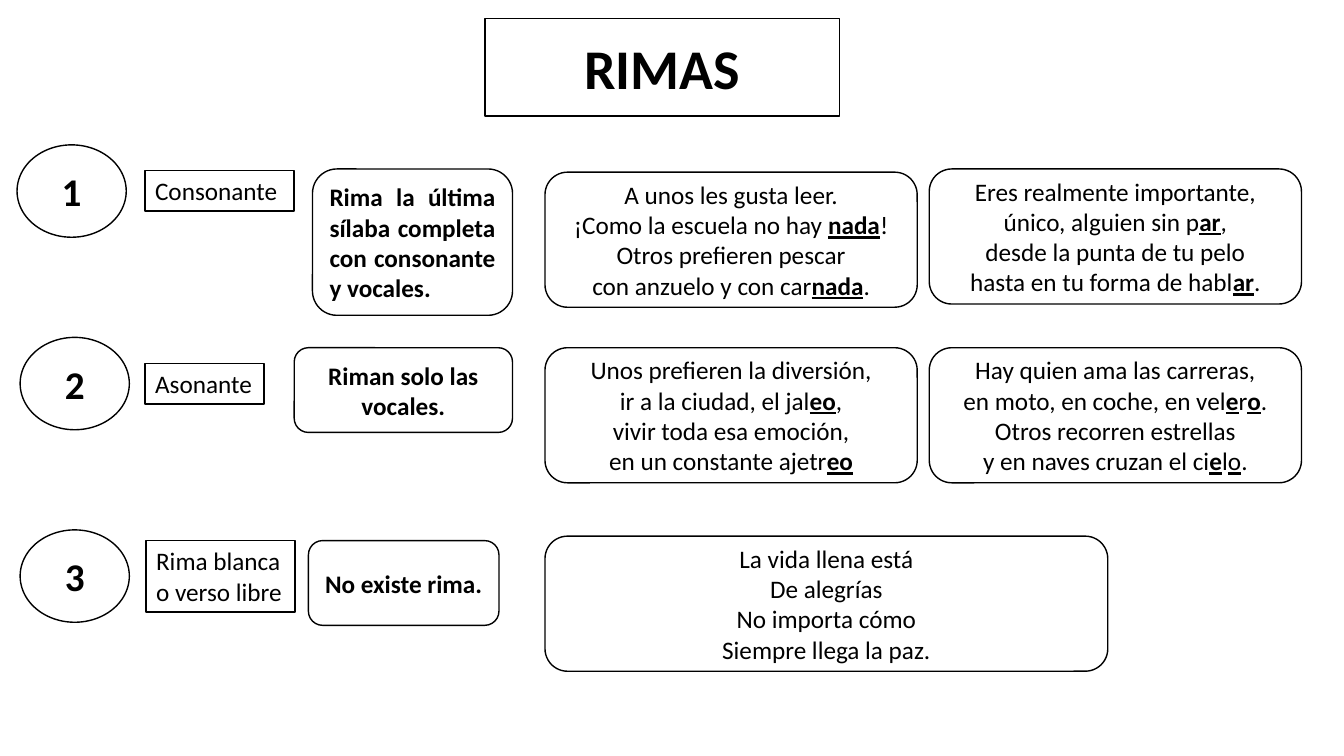
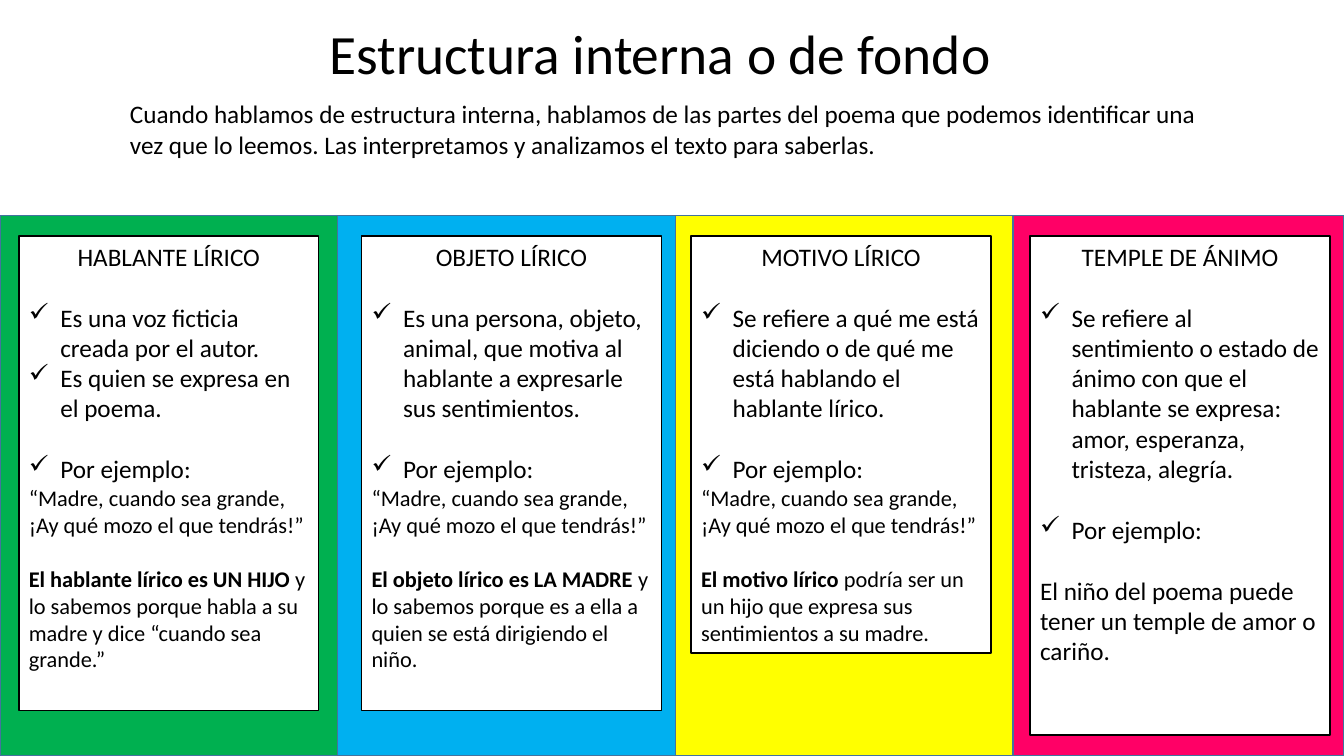
"""Build two slides on rhyme types and the inner structure of a poem."""
from dataclasses import dataclass
from lxml.etree import SubElement
from pptx import Presentation
from pptx.dml.color import RGBColor as Color
from pptx.enum.shapes import MSO_SHAPE as Kind
from pptx.enum.text import MSO_ANCHOR as Anchor, MSO_AUTO_SIZE as AutoSize, PP_ALIGN as Align
from pptx.oxml.ns import qn
from pptx.util import Pt


@dataclass(frozen=True)
class Theme:
    font: str = "Calibri"
    ink: Color = Color(0, 0, 0)
    paper: Color = Color(255, 255, 255)
    band_line: Color = Color.from_string("43739E")
    green: Color = Color.from_string("00B050")
    blue: Color = Color.from_string("00B0F0")
    yellow: Color = Color.from_string("FFFF00")
    pink: Color = Color.from_string("FF0066")
    frame_title: float = 40
    title: float = 39.6
    number: float = 28
    text: float = 18
    small: float = 16


theme = Theme()


def write(para, text, size, align=Align.LEFT, bold=False, underline=False):
    """Fill a paragraph; parts between bars are bold, and underlined on request."""
    para.alignment = align
    for index, part in enumerate(text.split("|")):
        if part:
            marked = index % 2 == 1
            span = para.add_run()
            span.text = part
            span.font.name = theme.font
            span.font.size = Pt(size)
            span.font.color.rgb = theme.ink
            span.font.bold = bold or marked
            span.font.underline = underline and marked


def add_box(page, kind, bounds, lines=(), size=theme.text, align=Align.CENTER,
            bold=False, anchor=Anchor.MIDDLE, fill=theme.paper, line=theme.ink):
    """Add a framed shape with one paragraph per line."""
    box = page.shapes.add_shape(kind, *map(Pt, bounds))
    box.shadow.inherit = False
    box.fill.solid()
    box.fill.fore_color.rgb = fill
    box.line.color.rgb = line
    box.line.width = Pt(1)
    frame = box.text_frame
    frame.word_wrap = True
    frame.vertical_anchor = anchor
    for index, text in enumerate(lines):
        para = frame.add_paragraph() if index else frame.paragraphs[0]
        write(para, text, size, align, bold, underline=True)
    return box


deck = Presentation()
deck.slide_width, deck.slide_height = Pt(960), Pt(540)
title_only = deck.slide_layouts[5]
rhymes, structure = [deck.slides.add_slide(title_only) for _ in range(2)]

titles = [
    (rhymes, "RIMAS", (346.3, 13, 253.4, 69.8), theme.frame_title, True, 1),
    (structure, "Estructura interna o de fondo", (57.6, 14.4, 828, 52.6), theme.title, False, 0.9),
]
for page, text, bounds, size, bold, spacing in titles:
    title = page.shapes.title
    title.left, title.top, title.width, title.height = map(Pt, bounds)
    title.text_frame.auto_size = AutoSize.NONE
    title.text_frame.vertical_anchor = Anchor.MIDDLE
    heading = title.text_frame.paragraphs[0]
    write(heading, text, size, Align.CENTER, bold)
    heading.line_spacing = spacing

title_frame = rhymes.shapes.title
outline = SubElement(title_frame.element.spPr, qn("a:prstGeom"), prst="roundRect")
SubElement(outline, qn("a:avLst"))
title_frame.fill.solid()
title_frame.fill.fore_color.rgb = theme.paper
title_frame.line.color.rgb = theme.ink
title_frame.line.width = Pt(1)

rows = [
    (12.2, "Consonante", (103.7, 121.7, 106.2, 29),
     "Rima la última sílaba completa con consonante y vocales.",
     (223.2, 120.7, 142.9, 104.5), Align.JUSTIFY),
    (14.4, "Asonante", (103.7, 259.5, 85, 29),
     "Riman solo las vocales.", (210.2, 248.4, 155.9, 60.5), Align.CENTER),
    (14.4, "Rima blanca o verso libre", (104.4, 386.2, 106.2, 50.9),
     "No existe rima.", (220.3, 386.2, 136.1, 60.5), Align.CENTER),
]
for index, (left, name, name_bounds, rule, rule_bounds, rule_align) in enumerate(rows):
    add_box(rhymes, Kind.OVAL, (left, 103.5 + 137.5 * index, 78, 66),
            [str(index + 1)], theme.number, bold=True)
    add_box(rhymes, Kind.RECTANGLE, name_bounds, [name], align=Align.LEFT, anchor=Anchor.TOP)
    add_box(rhymes, Kind.ROUNDED_RECTANGLE, rule_bounds, [rule], align=rule_align, bold=True)

verse_left, verse_right, verse_width, verse_height = 389.3, 663.8, 265.9, 96.5
verses = [
    (verse_left, 123, verse_width,
     ["A unos les gusta leer.", "¡Como la escuela no hay |nada|!",
      "Otros prefieren pescar", "con anzuelo y con car|nada|."]),
    (verse_right, 120.7, verse_width,
     ["Eres realmente importante, único, alguien sin p|ar|,",
      "desde la punta de tu pelo", "hasta en tu forma de habl|ar|."]),
    (verse_left, 248.4, verse_width,
     ["Unos prefieren la diversión,", "ir a la ciudad, el jal|eo|,",
      "vivir toda esa emoción,", "en un constante ajetr|eo|"]),
    (verse_left, 383, 402,
     ["La vida llena está", "De alegrías", "No importa cómo", "Siempre llega la paz."]),
    (verse_right, 248.4, verse_width,
     ["Hay quien ama las carreras,",
      "en moto, en coche, en vel|e|r|o|. Otros recorren estrellas",
      "y en naves cruzan el ci|e|l|o|."]),
]
for left, top, width, lines in verses:
    verse = add_box(rhymes, Kind.ROUNDED_RECTANGLE, (left, top, width, verse_height), lines)
verse.text_frame.paragraphs[-1].runs[-2].font.bold = False

intro = structure.shapes.add_textbox(Pt(85.7), Pt(67), Pt(793.4), Pt(51))
intro.text_frame.word_wrap = True
write(intro.text_frame.paragraphs[0],
      "Cuando hablamos de estructura interna, hablamos de las partes del poema que podemos "
      "identificar una vez que lo leemos. Las interpretamos y analizamos el texto para saberlas.",
      theme.text)

quote = ["“Madre, cuando sea grande,", "¡Ay qué mozo el que tendrás!”"]
columns = [
    ("HABLANTE LÍRICO", theme.green, 13.5, 339,
     ["Es una voz ficticia creada por el autor.", "Es quien se expresa en el poema."], quote,
     "|El hablante lírico es UN HIJO| y lo sabemos porque habla a su madre y dice "
     "“cuando sea grande.”", theme.small),
    ("OBJETO LÍRICO", theme.blue, 258.3, 339,
     ["Es una persona, objeto, animal, que motiva al hablante a expresarle sus sentimientos."],
     quote,
     "|El objeto lírico es LA MADRE |y lo sabemos porque es a ella a quien se está "
     "dirigiendo el niño.", theme.small),
    ("MOTIVO LÍRICO", theme.yellow, 493.7, 298,
     ["Se refiere a qué me está diciendo o de qué me está hablando el hablante lírico."], quote,
     "|El motivo lírico |podría ser un un hijo que expresa sus sentimientos a su madre.",
     theme.small),
    ("TEMPLE DE ÁNIMO", theme.pink, 735.8, 356.4,
     ["Se refiere al sentimiento o estado de ánimo con que el hablante se expresa: amor, "
      "esperanza, tristeza, alegría."], [],
     "El niño del poema puede tener un temple de amor o cariño.", theme.text),
]
band_width, band_top, line_height, indent = 241.2, 154, 1.22, 22.5
for index, column in reversed(list(enumerate(columns))):
    name, colour, left, height, points, quoted, closing, closing_size = column
    band_left = min(index * band_width, 960 - band_width)
    add_box(structure, Kind.RECTANGLE, (band_left, band_top, band_width, 540 - band_top),
            fill=colour, line=theme.band_line)
    panel = add_box(structure, Kind.RECTANGLE, (left, 168.5, 214.2, height), [name],
                    anchor=Anchor.TOP)
    bullets = points + ["Por ejemplo:"]
    entries = [(text, theme.text, True, text in (bullets[0], bullets[-1])) for text in bullets]
    entries += [(text, theme.small, False, False) for text in quoted]
    entries.append((closing, closing_size, False, True))
    for text, size, bulleted, gap in entries:
        para = panel.text_frame.add_paragraph()
        if bulleted:
            properties = para._p.get_or_add_pPr()
            properties.set("marL", str(Pt(indent)))
            properties.set("indent", str(-Pt(indent)))
            SubElement(properties, qn("a:buChar"), char="✓")
        para.space_before = Pt(round(size * line_height, 1) if gap else 0)
        write(para, text, size)

deck.save("out.pptx")
